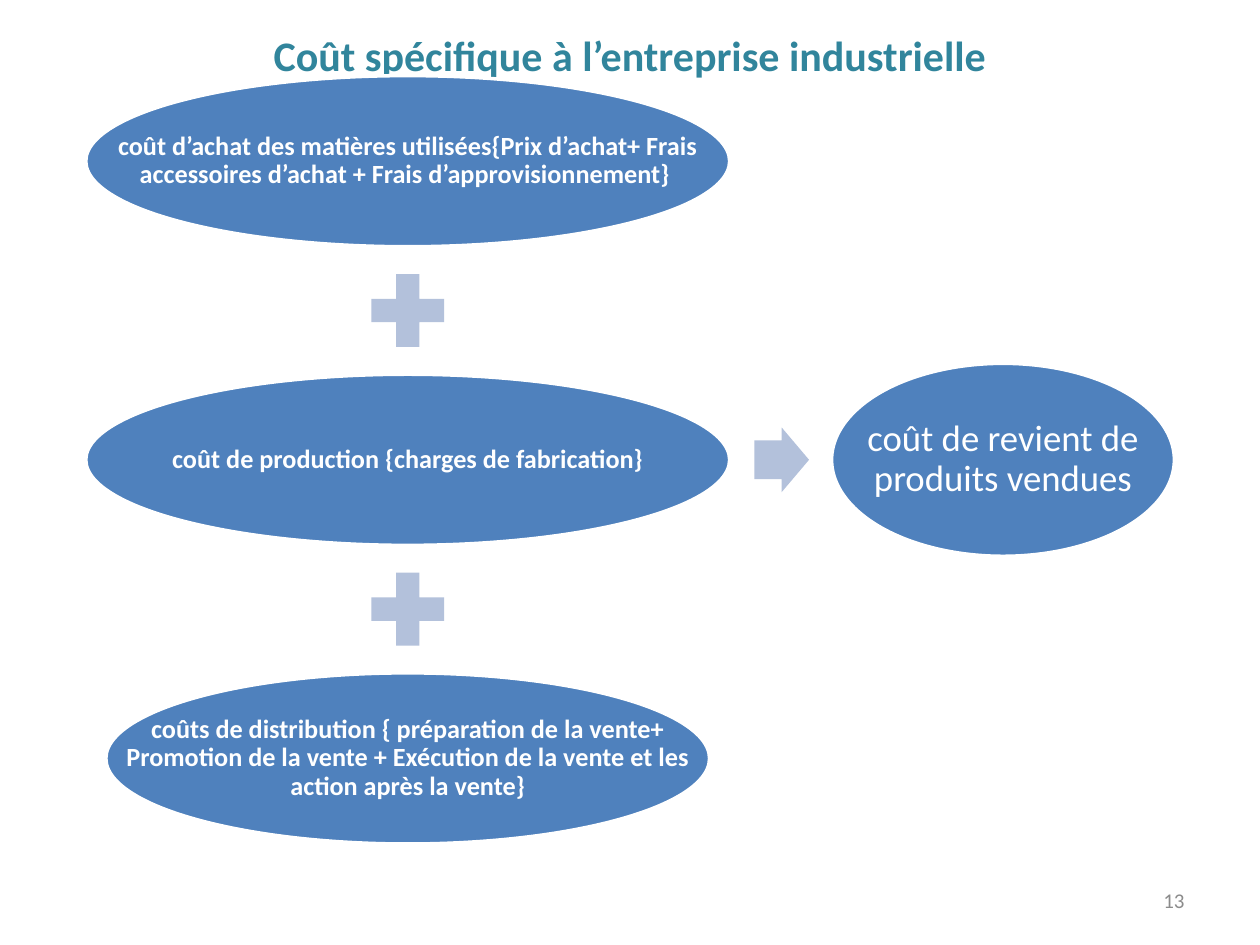
from pptx import Presentation
from pptx.dml.color import RGBColor
from pptx.enum.shapes import MSO_SHAPE
from pptx.enum.text import MSO_ANCHOR, PP_ALIGN
from pptx.util import Cm, Pt


def color(hex_code):
    return RGBColor.from_string(hex_code)


def write(frame, text, size=15, ink="FFFFFF", bold=False, align=PP_ALIGN.CENTER,
          spacing=1.0, inset=None):
    frame.word_wrap = True
    frame.vertical_anchor = MSO_ANCHOR.MIDDLE
    if inset is not None:
        frame.margin_left = frame.margin_right = Cm(inset)
        frame.margin_top = frame.margin_bottom = Cm(inset)
    paragraph = frame.paragraphs[0]
    paragraph.alignment = align
    paragraph.line_spacing = spacing
    run = paragraph.add_run()
    run.text = text
    run.font.name = "Calibri"
    run.font.size = Pt(size)
    run.font.bold = bold
    run.font.color.rgb = color(ink)


def centered(x, y, width, height):
    return Cm(x - width / 2), Cm(y - height / 2), Cm(width), Cm(height)


class CostSlide:
    main = "4F81BD"
    soft = "B3C1DB"
    heading = "31859C"
    muted = "8C8C8C"

    def __init__(self, deck):
        self.slide = deck.slides.add_slide(deck.slide_layouts[5])

    def title(self, text):
        title = self.slide.shapes.title
        title.left, title.top, title.width, title.height = Cm(1.27), Cm(0), Cm(22.86), Cm(2.2)
        write(title.text_frame, text, size=24, ink=self.heading, bold=True)

    def shape(self, preset, box, fill, outline=None):
        shape = self.slide.shapes.add_shape(preset, *box)
        shape.shadow.inherit = False
        shape.fill.solid()
        shape.fill.fore_color.rgb = color(fill)
        if outline:
            shape.line.color.rgb = color(outline)
            shape.line.width = Pt(2)
        else:
            shape.line.fill.background()
        return shape

    def text(self, text, box, **style):
        write(self.slide.shapes.add_textbox(*box).text_frame, text, **style)

    def cost(self, text, box, **style):
        self.shape(MSO_SHAPE.OVAL, box, self.main, outline="FFFFFF")
        self.text(text, box, spacing=0.9, inset=0.05, **style)

    def plus(self, x, y):
        self.shape(MSO_SHAPE.MATH_PLUS, centered(x, y, 2, 2), self.soft)

    def arrow(self, x, y):
        arrow = self.shape(MSO_SHAPE.RIGHT_ARROW, centered(x, y, 1.1, 1.3), self.soft)
        arrow.adjustments[0] = 0.6
        arrow.adjustments[1] = 0.5

    def number(self, text):
        self.text(text, (Cm(18.2), Cm(17.65), Cm(5.93), Cm(1.01)),
                  size=12, ink=self.muted, align=PP_ALIGN.RIGHT)


def main():
    deck = Presentation()
    deck.slide_width, deck.slide_height = Cm(25.4), Cm(19.05)
    page = CostSlide(deck)
    page.title("Coût spécifique à l’entreprise industrielle")

    axis, first, step = 8.22, 3.25, 6.02
    costs = [
        ("coût d’achat des matières utilisées{Prix d’achat+ Frais accessoires d’achat "
         "+ Frais d’approvisionnement} ", 12.98),
        ("coût de production {charges de fabrication}", 12.98),
        ("coûts de distribution { préparation de la vente+ Promotion de la vente "
         "+ Exécution de la vente et les action après la vente}", 12.17),
    ]
    for row, (label, width) in enumerate(costs):
        y = first + row * step
        if row:
            page.plus(axis, y - step / 2)
        page.cost(label, centered(axis, y, width, 3.45), bold=True)

    middle = first + step
    page.arrow(15.76, middle)
    page.cost("coût de revient de produits vendues", centered(20.22, middle, 6.91, 3.89), size=21)
    page.number("13")
    deck.save("out.pptx")


if __name__ == "__main__":
    main()
